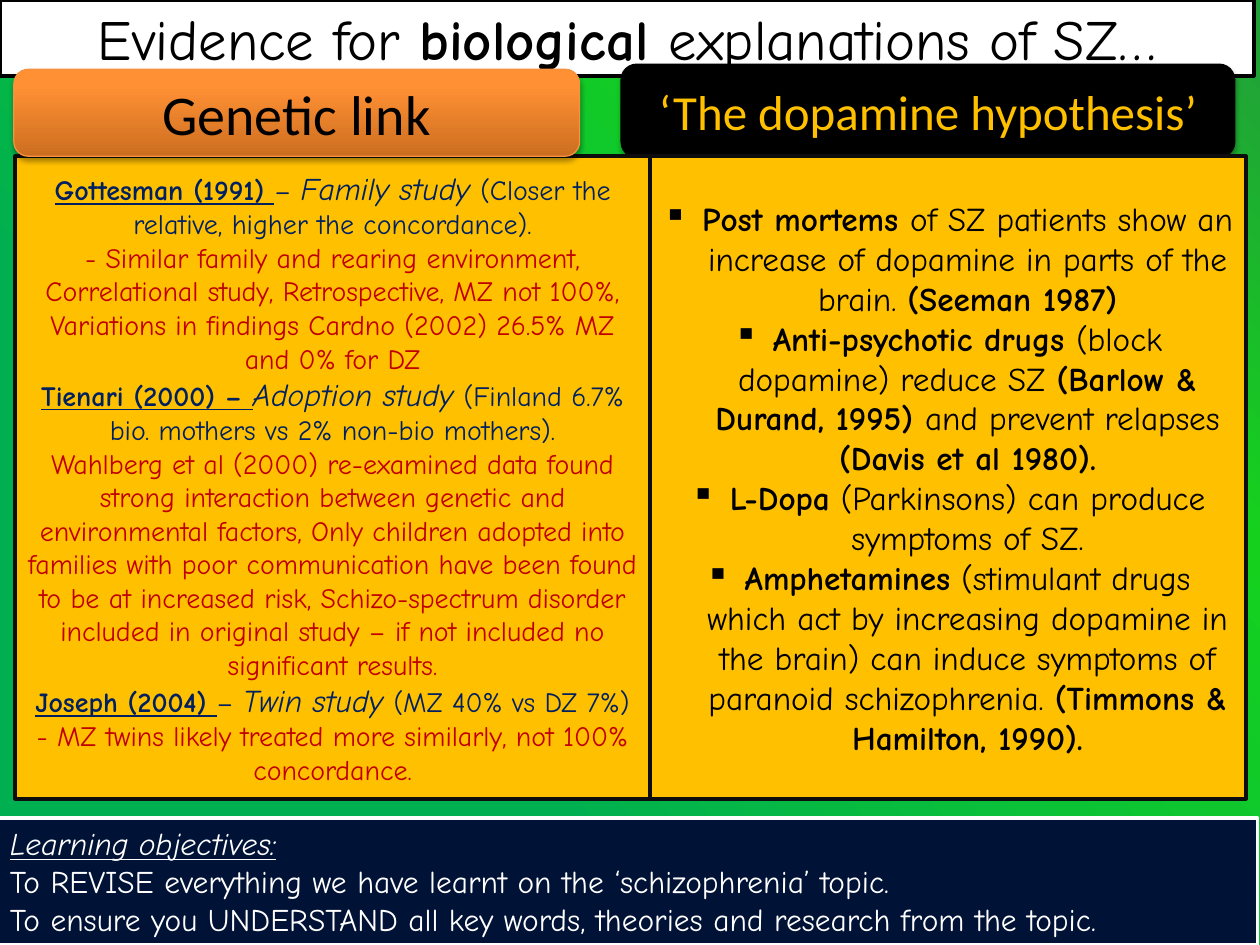
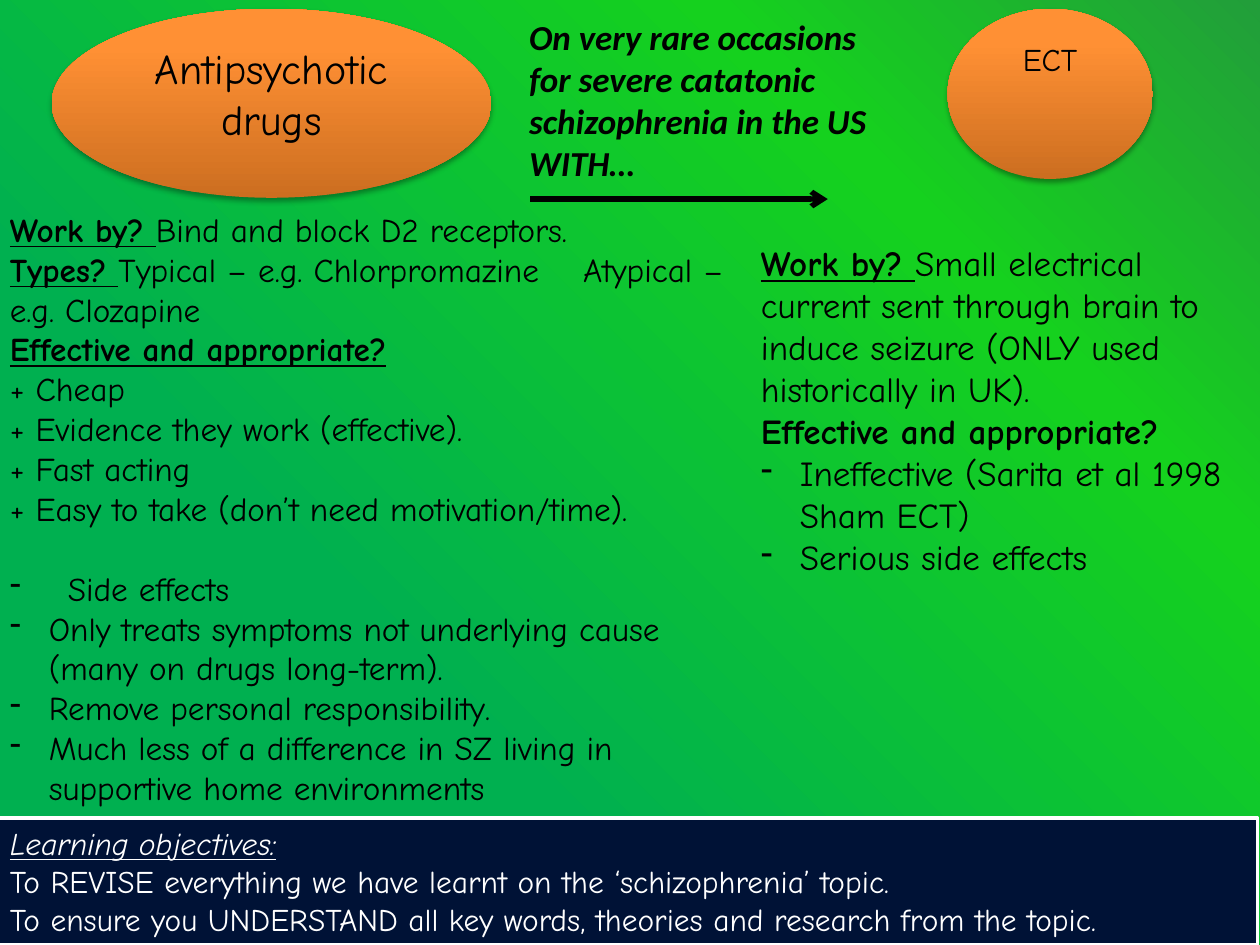
import pptx
import pptx.util
import pptx.dml.color
import pptx.enum.shapes
import pptx.enum.text
import pptx.oxml.ns
import lxml.etree

qn = pptx.oxml.ns.qn
Pt = pptx.util.Pt
Kind = pptx.enum.shapes.MSO_SHAPE
Align = pptx.enum.text.PP_ALIGN
Anchor = pptx.enum.text.MSO_ANCHOR


def paint(text):
    return pptx.dml.color.RGBColor.from_string(text)


def add(root, tag, **attrs):
    return lxml.etree.SubElement(root, qn(tag), attrs)


class Deck:
    """Holds the shared style, the grid and the current slide."""

    COLS, ROWS = 100, 75
    FONT, PLAIN = "Comic Neue", "Calibri"
    BLACK, WHITE, GOLD = "000000", "FFFFFF", "FFC000"
    NAVY, RED, DARK, EDGE = "002060", "C00000", "001236", "0D0D0D"
    GREEN = [(0, "00B050"), (31, "00B050"), (75, "15D11E"), (100, "229E3A")]
    ORANGE = [(0, "CC6E20"), (80, "FF9034"), (100, "FF9136")]
    RIM = "F69240"
    GOALS = ["iu~Learning objectives:",
             "To REVISE everything we have learnt on the ‘schizophrenia’ topic.",
             "To ensure you UNDERSTAND all key words, theories and research from the topic."]

    def __init__(self):
        self.show = pptx.Presentation()
        self.show.slide_width = pptx.util.Inches(10)
        self.show.slide_height = pptx.util.Inches(7.5)
        self.slide = None

    def col(self, n):
        return round(n * self.show.slide_width / self.COLS)

    def row(self, n):
        return round(n * self.show.slide_height / self.ROWS)

    def area(self, x, y, w, h):
        return self.col(x), self.row(y), self.col(w), self.row(h)

    def page(self, layout):
        self.slide = self.show.slides.add_slide(self.show.slide_layouts[layout])
        self.blend(self.slide.background.fill, self.slide.element, self.GREEN, 45)

    def blend(self, fill, root, stops, angle):
        fill.gradient()
        fill.gradient_angle = angle
        ramp = next(root.iter(qn("a:gsLst")))
        for stop in list(ramp):
            ramp.remove(stop)
        for pos, tint in stops:
            add(add(ramp, "a:gs", pos=str(pos * 1000)), "a:srgbClr", val=tint)

    def coat(self, shape, fill, line, width):
        if isinstance(fill, str):
            shape.fill.solid()
            shape.fill.fore_color.rgb = paint(fill)
        else:
            self.blend(shape.fill, shape.element, fill, 90)
        if line:
            shape.line.color.rgb = paint(line)
            shape.line.width = Pt(width)
        else:
            shape.line.fill.background()

    def box(self, area, kind, fill, line=None, width=2, shade=False):
        shape = self.slide.shapes.add_shape(kind, *self.area(*area))
        self.coat(shape, fill, line, width)
        shape.shadow.inherit = False
        if shade:
            glow = add(shape.element.spPr.find(qn("a:effectLst")), "a:outerShdw",
                       blurRad=str(Pt(3.1)), dist=str(Pt(1.8)),
                       dir="5400000", rotWithShape="0")
            add(add(glow, "a:srgbClr", val=self.BLACK), "a:alpha", val="35000")
        return shape

    def hang(self, para, cols):
        props = para._p.get_or_add_pPr()
        props.set("marL", str(self.col(cols)))
        props.set("indent", str(-self.col(cols)))
        return props

    def put(self, shape, lines, size, tint=BLACK, font=FONT,
            align=Align.CENTER, anchor=Anchor.MIDDLE):
        frame = shape.text_frame
        frame.word_wrap = True
        frame.auto_size = pptx.enum.text.MSO_AUTO_SIZE.NONE
        frame.vertical_anchor = anchor
        frame.text = "\n".join([""] * len(lines))
        for para, line in zip(frame.paragraphs, lines):
            para.alignment = align
            if line[:2] in ("▪\t", "-\t"):
                add(self.hang(para, 3.1), "a:buChar", char=line[0])
                line = line[2:]
            for part in line.split("|"):
                flags, mark, words = part.rpartition("~")
                run = para.add_run()
                run.text = words
                face = run.font
                face.name = font
                face.size = Pt(size + 2 if "+" in flags else size)
                face.bold, face.italic = "b" in flags, "i" in flags
                face.underline = "u" in flags
                shade = self.NAVY if "n" in flags else self.RED if "r" in flags else tint
                face.color.rgb = paint(shade)
        return frame.paragraphs

    def title(self, area, line, size):
        head = self.slide.shapes.title
        head.left, head.top, head.width, head.height = self.area(*area)
        self.coat(head, self.WHITE, self.BLACK, 2.25)
        self.put(head, [line], size)

    def foot(self):
        band = self.box((-0.2, 64.9, 100, 10.1), Kind.RECTANGLE, self.DARK, self.WHITE)
        self.put(band, self.GOALS, 18, self.WHITE, align=Align.LEFT, anchor=Anchor.TOP)

    def panel(self, x, w, lines, size):
        pane = self.box((x, 12.4, w, 51), Kind.RECTANGLE, self.GOLD, self.EDGE)
        self.put(pane, lines, size)

    def tab(self, area, words, size, fill, line, tint):
        label = self.box(area, Kind.ROUNDED_RECTANGLE, fill, line, 0.75, True)
        self.put(label, [words], size, tint, self.PLAIN)

    def oval(self, area, words, size):
        disc = self.box(area, Kind.OVAL, self.ORANGE, shade=True)
        self.put(disc, [words], size, anchor=Anchor.TOP)

    def note(self, area, lines, size, font=FONT):
        text = self.slide.shapes.add_textbox(*self.area(*area))
        return self.put(text, lines, size, font=font, align=Align.LEFT, anchor=Anchor.TOP)

    def arrow(self, x, y, end):
        link = self.slide.shapes.add_connector(
            pptx.enum.shapes.MSO_CONNECTOR.STRAIGHT,
            self.col(x), self.row(y), self.col(end), self.row(y))
        link.line.color.rgb = paint(self.BLACK)
        link.line.width = Pt(3)
        add(link.line._get_or_add_ln(), "a:tailEnd", type="arrow")
        add(link._element.spPr, "a:effectLst")


GENES = [
    "nbu~Gottesman (1991) |n~– |ni+~Family study |n~(Closer the relative, higher the concordance).",
    "r~- Similar family and rearing environment, Correlational study, Retrospective, "
    "MZ not 100%, Variations in findings Cardno (2002) 26.5% MZ and 0% for DZ",
    "nbu~Tienari (2000) – |ni+~Adoption study |n~(Finland 6.7% bio. mothers vs 2% non-bio mothers).",
    "r~Wahlberg et al (2000) re-examined data found strong interaction between genetic and "
    "environmental factors, Only children adopted into families with poor communication have "
    "been found to be at increased risk, Schizo-spectrum disorder included in original study "
    "– if not included no significant results.",
    "nbu~Joseph (2004) |n~– |ni+~Twin study |n~(MZ 40% vs DZ 7%) |"
    "r~- MZ twins likely treated more similarly, not 100% concordance.",
]
DOPA = [
    "▪\tb~Post mortems |of SZ patients show an increase of dopamine in parts of the brain. "
    "|b~(Seeman 1987)",
    "▪\tb~Anti-psychotic drugs |(block dopamine) reduce SZ |b~(Barlow & Durand, 1995) "
    "|and prevent relapses |b~(Davis et al 1980).",
    "▪\tb~L-Dopa| (Parkinsons) can produce symptoms of SZ.",
    "▪\tb~Amphetamines| (stimulant drugs which act by increasing dopamine in the brain) "
    "can induce symptoms of paranoid schizophrenia. |b~(Timmons & Hamilton, 1990).",
]
DRUGS = [
    "bu~Work by? |Bind and block D2 receptors.",
    "bu~Types? |Typical – e.g. Chlorpromazine\tAtypical – e.g. Clozapine",
    "bu~Effective and appropriate?",
    "+ Cheap",
    "+ Evidence they work (effective).",
    "+ Fast acting",
    "+ Easy to take (don’t need motivation/time).",
    "-\tSide effects",
    "-\tOnly treats symptoms not underlying cause (many on drugs long-term).",
    "-\tRemove personal responsibility.",
    "-\tMuch less of a difference in SZ living in supportive home environments",
]
SHOCK = [
    "bu~Work by? |Small electrical current sent through brain to induce seizure "
    "(ONLY used historically in UK).",
    "b~Effective and appropriate?",
    "-\tIneffective (Sarita et al 1998 Sham ECT)",
    "-\tSerious side effects",
]


def causes(deck):
    deck.page(5)
    deck.title((0, 0, 99.5, 6), "Evidence for |b~biological |explanations of SZ…", 32.4)
    deck.foot()
    deck.tab((49.3, 5.1, 48.7, 7.4), "‘The dopamine hypothesis’", 28,
             deck.BLACK, deck.BLACK, deck.GOLD)
    deck.panel(1.2, 50.4, GENES, 16)
    deck.tab((1.1, 5.5, 44.9, 6.9), "Genetic link", 32, deck.ORANGE, deck.RIM, deck.BLACK)
    deck.panel(51.6, 47.3, DOPA, 19)


def cures(deck):
    deck.page(6)
    deck.oval((4.1, 0.7, 34.9, 15), "Antipsychotic drugs", 24)
    deck.arrow(42.1, 15.8, 65.7)
    deck.note((41, 0.7, 29.9, 14.5),
              ["bi~On very rare occasions for severe catatonic schizophrenia in the US WITH…"],
              20, deck.PLAIN)
    deck.oval((75.2, 0.7, 16.3, 13.5), "ECT", 18)
    deck.foot()
    lines = deck.note((-0.2, 16.1, 59.6, 48.5), DRUGS, 19)
    stops = add(lines[1]._p.get_or_add_pPr(), "a:tabLst")
    add(stops, "a:tab", pos=str(deck.col(45.5)), algn="l")
    lines[7].space_before = Pt(22.8)
    deck.hang(lines[7], 4.6)
    deck.note((59.4, 18.7, 40.4, 27.9), SHOCK, 20)


def main():
    deck = Deck()
    causes(deck)
    cures(deck)
    deck.show.save("out.pptx")


if __name__ == "__main__":
    main()
